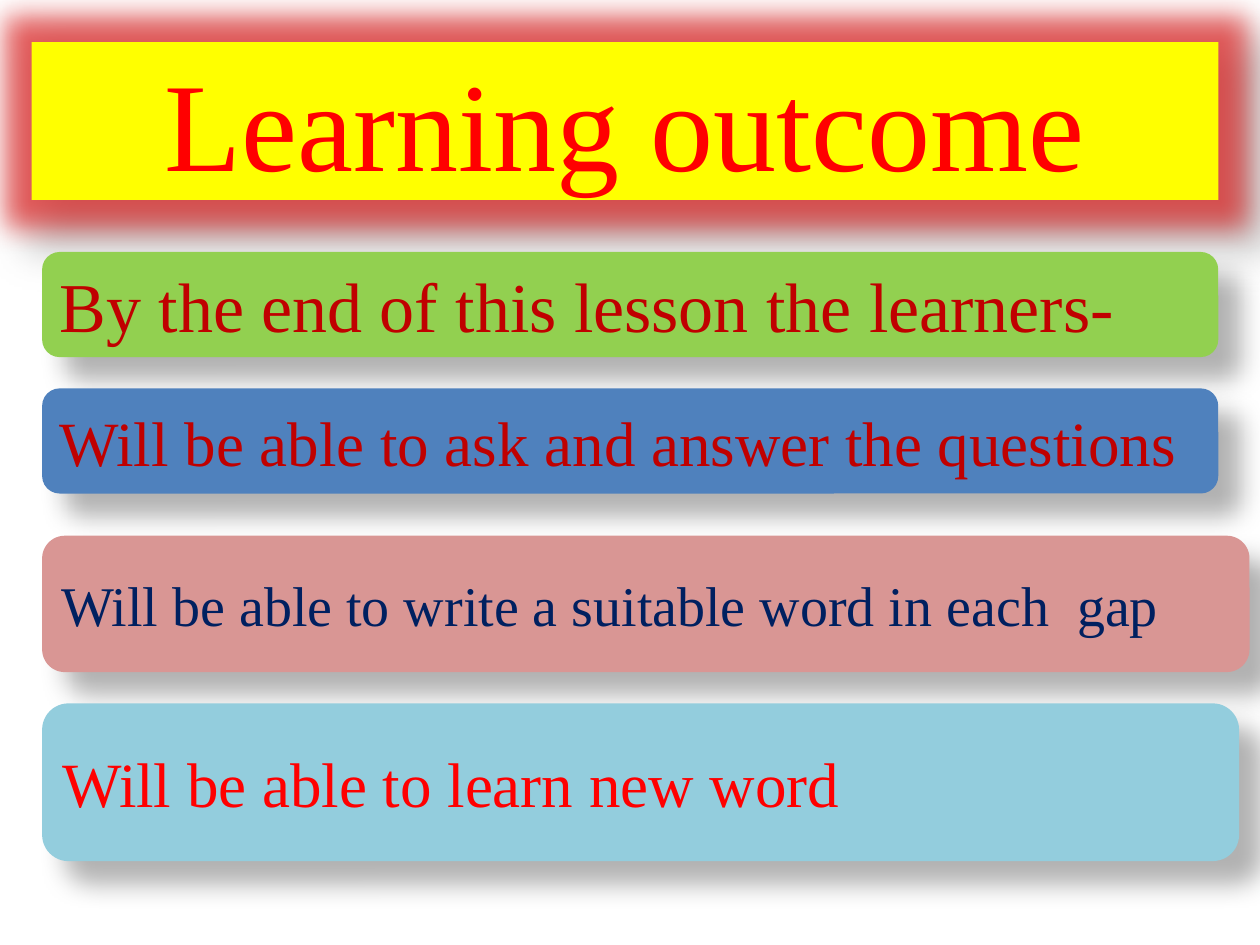
from dataclasses import dataclass

from lxml import etree
from pptx import Presentation
from pptx.dml.color import RGBColor
from pptx.enum.shapes import MSO_SHAPE
from pptx.enum.text import MSO_ANCHOR, MSO_AUTO_SIZE, PP_ALIGN
from pptx.oxml.ns import qn
from pptx.shapes.autoshape import Shape
from pptx.util import Cm, Pt

ROUNDED = MSO_SHAPE.ROUNDED_RECTANGLE
MIDDLE = MSO_ANCHOR.MIDDLE
NO_FIT = MSO_AUTO_SIZE.NONE
LEFT, CENTER = PP_ALIGN.LEFT, PP_ALIGN.CENTER
FONT = "Times New Roman"
TITLE_ONLY = 5
BAR_LEFT = 0.85  # cm


@dataclass
class Bar:
    text: str
    top: float  # cm
    width: float
    height: float
    fill: str
    color: str
    size: int


BARS = [
    Bar("By the end of this lesson the learners-", 5.08, 23.71, 2.12, "92D050", "C00000", 40),
    Bar("Will be able to ask and answer the questions", 7.83, 23.71, 2.12, "4F81BD", "C00000", 36),
    Bar("Will be able to write a suitable word in each  gap", 10.8, 24.34, 2.75, "D99694", "002060", 32),
    Bar("Will be able to learn new word", 14.18, 24.13, 3.18, "93CDDD", "FF0000", 36),
]


def rgb(color: str) -> RGBColor:
    return RGBColor.from_string(color)


def add_effect(shape: Shape, tag: str, color: str, alpha: int, **attributes: int) -> None:
    effects = shape._element.spPr.find(qn("a:effectLst"))
    effect = etree.SubElement(effects, qn(tag), {k: str(v) for k, v in attributes.items()})
    tint = etree.SubElement(effect, qn("a:srgbClr"), val=color)
    etree.SubElement(tint, qn("a:alpha"), val=str(alpha * 1000))


def add_shadow(shape: Shape) -> None:
    add_effect(shape, "a:outerShdw", "000000", 30, blurRad=Pt(15), dist=Pt(18),
               dir=45 * 60000, rotWithShape=0)


def style_panel(shape: Shape, fill: str) -> None:
    shape.fill.solid()
    shape.fill.fore_color.rgb = rgb(fill)
    shape.line.fill.background()
    shape.shadow.inherit = False


def write_text(shape: Shape, text: str, size: int, color: str, align: PP_ALIGN) -> None:
    frame = shape.text_frame
    frame.word_wrap = True
    frame.auto_size = NO_FIT
    frame.vertical_anchor = MIDDLE
    paragraph = frame.paragraphs[0]
    paragraph.alignment = align
    run = paragraph.add_run()
    run.text = text
    run.font.name = FONT
    run.font.size = Pt(size)
    run.font.color.rgb = rgb(color)


def main() -> None:
    prs = Presentation()
    prs.slide_width, prs.slide_height = Cm(25.4), Cm(19.05)
    slide = prs.slides.add_slide(prs.slide_layouts[TITLE_ONLY])

    # Title banner with a red glow
    title = slide.shapes.title
    title.left, title.top = Cm(0.64), Cm(0.85)
    title.width, title.height = Cm(23.92), Cm(3.18)
    style_panel(title, "FFFF00")
    add_effect(title, "a:glow", "E03030", 75, rad=Pt(32))
    add_shadow(title)
    write_text(title, "Learning outcome", 72, "FF0000", CENTER)

    # Outcome bars
    for bar in BARS:
        panel = slide.shapes.add_shape(
            ROUNDED, Cm(BAR_LEFT), Cm(bar.top), Cm(bar.width), Cm(bar.height))
        style_panel(panel, bar.fill)
        add_shadow(panel)
        write_text(panel, bar.text, bar.size, bar.color, LEFT)

    prs.save("out.pptx")


if __name__ == "__main__":
    main()
